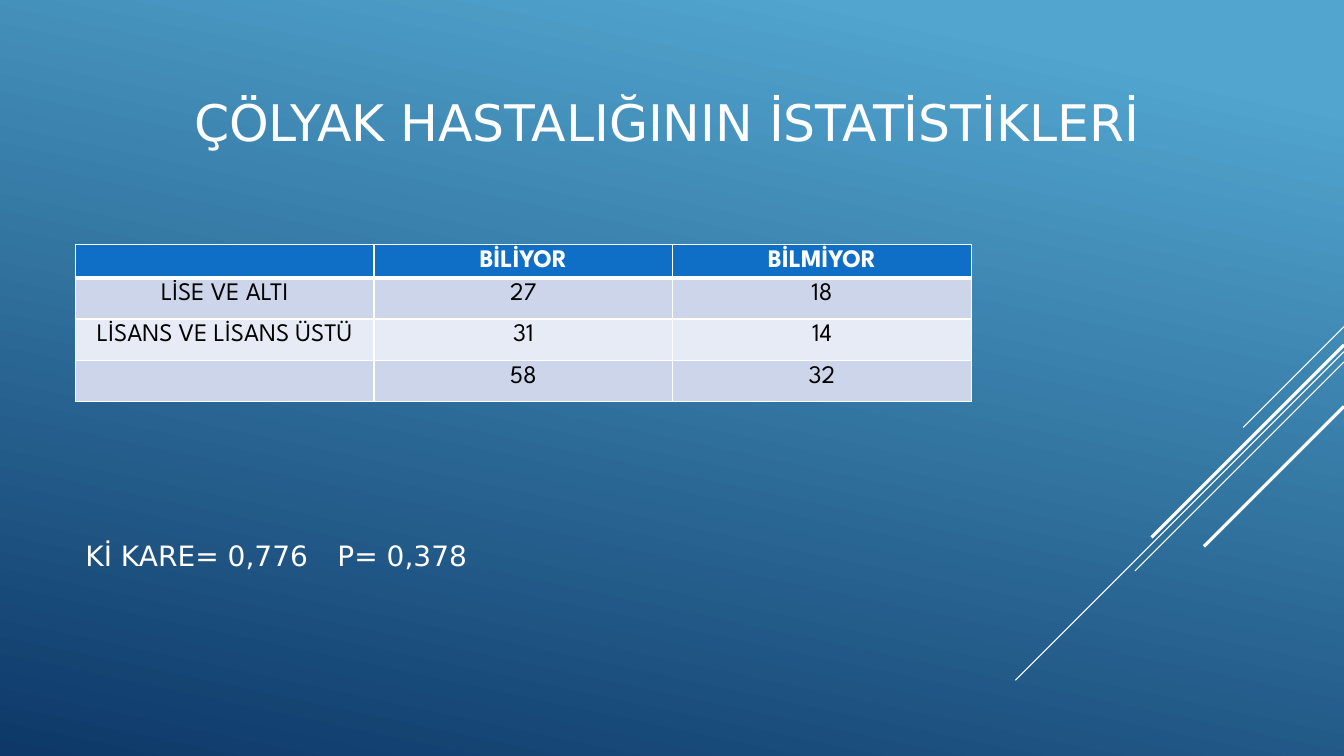
from dataclasses import dataclass

from lxml import etree
from pptx import Presentation
from pptx.dml.color import RGBColor
from pptx.enum.shapes import MSO_CONNECTOR
from pptx.enum.text import MSO_ANCHOR, MSO_AUTO_SIZE, PP_ALIGN
from pptx.oxml import parse_xml
from pptx.oxml.ns import nsdecls, qn
from pptx.util import Cm, Pt

STRAIGHT = MSO_CONNECTOR.STRAIGHT
MIDDLE = MSO_ANCHOR.MIDDLE
NO_AUTOFIT = MSO_AUTO_SIZE.NONE
CENTER, LEFT = PP_ALIGN.CENTER, PP_ALIGN.LEFT


@dataclass(frozen=True)
class Theme:
    white: str = "FFFFFF"
    black: str = "000000"
    sky: str = "51A5CF"
    navy: str = "0D3868"
    header: str = "0F6FC6"
    bands: tuple = ("E7EBF5", "CCD5EA")
    text_font: str = "DejaVu Sans"
    table_font: str = "League Spartan"
    title_size: int = 36
    body_size: int = 20
    table_size: int = 18


THEME = Theme()


def write(para, text, align, color, **font_values):
    para.alignment = align
    span = para.add_run()
    span.text = text
    span.font.color.rgb = RGBColor.from_string(color)
    for name, value in font_values.items():
        setattr(span.font, name, value)


def add_borders(cell, widths):
    """Draw white cell borders; widths maps each side (L, R, T, B) to points."""
    properties = cell._tc.get_or_add_tcPr()
    for index, (side, width) in enumerate(widths.items()):
        properties.insert(index, parse_xml(
            f'<a:ln{side} {nsdecls("a")} w="{Pt(width)}"><a:solidFill>'
            f'<a:srgbClr val="{THEME.white}"/></a:solidFill></a:ln{side}>'))


deck = Presentation()
deck.slide_width, deck.slide_height = Cm(33.87), Cm(19.05)
page = deck.slides.add_slide(deck.slide_layouts[1])

# Background
backdrop = page.background.fill
backdrop.gradient()
backdrop.gradient_angle = 258
for stop, position, color in zip(backdrop.gradient_stops, (0.1, 1), (THEME.sky, THEME.navy)):
    stop.position = position
    stop.color.rgb = RGBColor.from_string(color)

# Diagonal rays at 45 degrees from the right edge: top, reach, line width
rays = [(8.23, 2.54, 0.75), (8.86, 8.28, 0.75), (9.12, 5.27, 0.75),
        (8.69, 4.85, 2.25), (10.24, 3.53, 2.25)]
for top, reach, width in rays:
    ray = page.shapes.add_connector(
        STRAIGHT, Cm(33.87), Cm(top), Cm(33.87 - reach), Cm(top + reach))
    ray.line.color.rgb = RGBColor.from_string(THEME.white)
    ray.line.width = Pt(width)
    etree.SubElement(ray._element.spPr, qn("a:effectLst"))

# Title and test results
title, results = page.shapes.title, page.placeholders[1]
blocks = [
    (title, (0.81, 1.09, 32, 3.91), "ÇÖLYAK HASTALIĞININ İSTATİSTİKLERİ", CENTER, THEME.title_size),
    (results, (1.9, 11.3, 17.78, 5.41), "Kİ KARE= 0,776\tP= 0,378", LEFT, THEME.body_size),
]
for holder, place, text, align, size in blocks:
    for name, value in zip(("left", "top", "width", "height"), place):
        setattr(holder, name, Cm(value))
    frame = holder.text_frame
    frame.word_wrap = True
    frame.auto_size = NO_AUTOFIT
    frame.vertical_anchor = MIDDLE
    write(frame.paragraphs[0], text, align, THEME.white, name=THEME.text_font, size=Pt(size))

results_para = results.text_frame.paragraphs[0]
results_para.space_before, results_para.space_after = Pt(4), Pt(6)
para_format = results_para._p.get_or_add_pPr()
para_format.set("marL", "0")
para_format.set("indent", "0")
etree.SubElement(para_format, qn("a:buNone"))
tab_stops = etree.SubElement(para_format, qn("a:tabLst"))
etree.SubElement(tab_stops, qn("a:tab"), pos=str(Cm(10.16)), algn="l")

# Table of answers by education
answers = [
    ("", "BİLİYOR", "BİLMİYOR"),
    ("LİSE VE ALTI", "27", "18"),
    ("LİSANS VE LİSANS ÜSTÜ", "31", "14"),
    ("", "58", "32"),
]
row_heights = (0.83, 1.04, 1.04, 1.04)
table = page.shapes.add_table(
    len(answers), 3, Cm(1.9), Cm(6.16), Cm(22.58), Cm(sum(row_heights))).table
for row_index, (texts, height) in enumerate(zip(answers, row_heights)):
    table.rows[row_index].height = Cm(height)
    is_header = row_index == 0
    fill = THEME.header if is_header else THEME.bands[row_index % 2]
    color = THEME.white if is_header else THEME.black
    borders = {"L": 1, "R": 1, "T": 3 if row_index == 1 else 1, "B": 3 if is_header else 1}
    for column_index, text in enumerate(texts):
        cell = table.cell(row_index, column_index)
        cell.fill.solid()
        cell.fill.fore_color.rgb = RGBColor.from_string(fill)
        add_borders(cell, borders)
        if text:
            write(cell.text_frame.paragraphs[0], text, CENTER, color,
                  name=THEME.table_font, size=Pt(THEME.table_size), bold=is_header)
        else:
            cell.margin_top = cell.margin_bottom = 0

deck.save("out.pptx")
